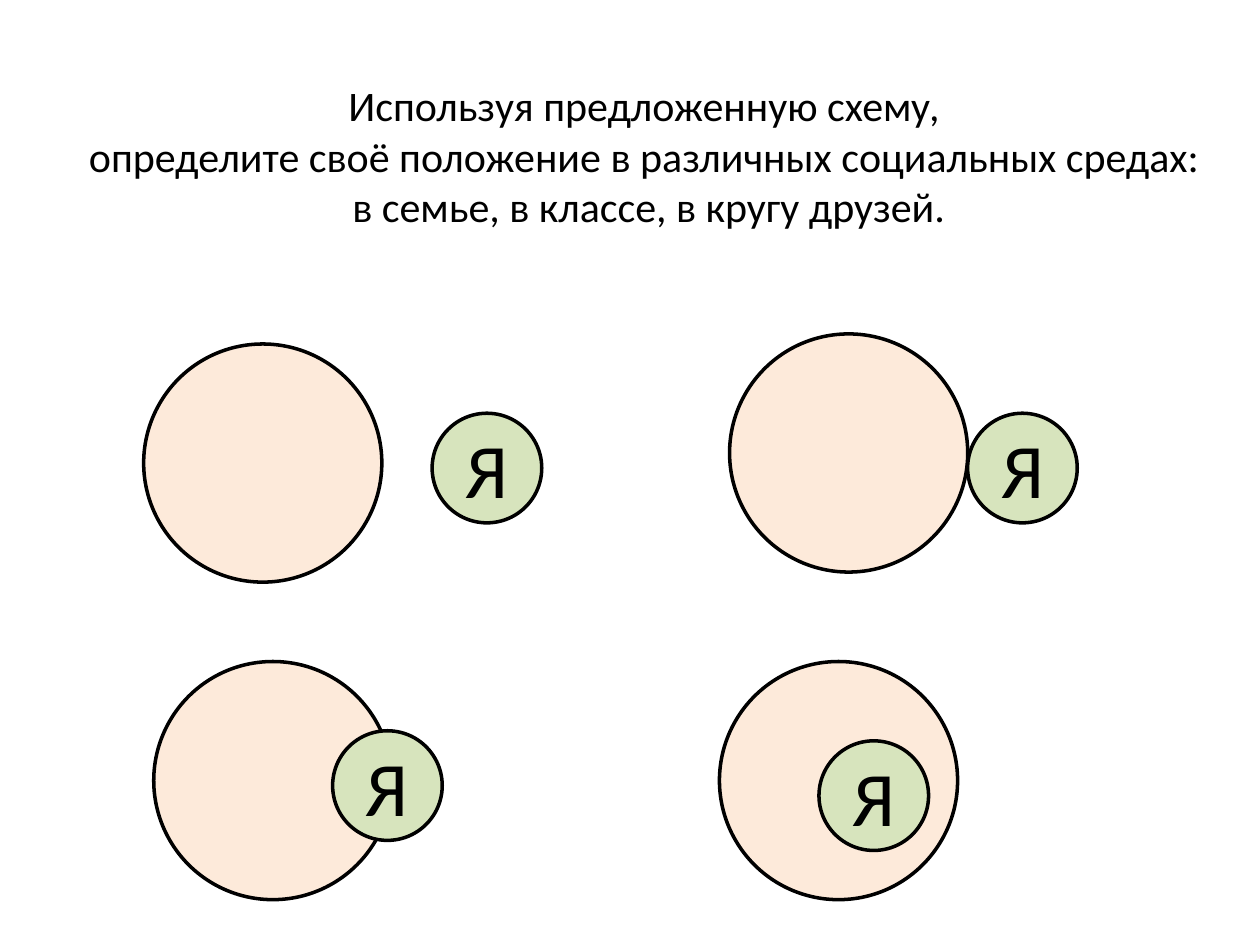
import pptx
import pptx.dml.color
import pptx.enum.shapes
import pptx.enum.text
import pptx.util

BLACK = pptx.dml.color.RGBColor(0x00, 0x00, 0x00)
PEACH = pptx.dml.color.RGBColor(0xFD, 0xEA, 0xDA)
GREEN = pptx.dml.color.RGBColor(0xD7, 0xE4, 0xBD)
Inches = pptx.util.Inches

GROUP_SIZE = 1.89
SELF_SIZE = 0.87
# (left, top) of the group circle and of the "Я" circle
POSITIONS = [
    ((1.14, 2.73), (3.43, 3.28)),  # apart
    ((5.79, 2.65), (7.68, 3.28)),  # touching
    ((1.22, 5.25), (2.64, 5.80)),  # overlapping
    ((5.71, 5.25), (6.50, 5.88)),  # inside
]


def write(s, text, size):
    """Put centred black text in the middle of a shape."""
    tf = s.text_frame
    tf.text = text
    tf.vertical_anchor = pptx.enum.text.MSO_ANCHOR.MIDDLE
    p = tf.paragraphs[0]
    p.alignment = pptx.enum.text.PP_ALIGN.CENTER
    p.font.name = "Calibri"
    p.font.size = pptx.util.Pt(size)
    p.font.color.rgb = BLACK


def add_circle(position, size, color):
    left, top = position
    s = slide.shapes.add_shape(
        pptx.enum.shapes.MSO_SHAPE.OVAL,
        Inches(left), Inches(top), Inches(size), Inches(size))
    s.shadow.inherit = False
    s.fill.solid()
    s.fill.fore_color.rgb = color
    s.line.color.rgb = BLACK
    s.line.width = pptx.util.Pt(2)
    return s


prs = pptx.Presentation()
prs.slide_width = Inches(10)
prs.slide_height = Inches(7.5)
slide = prs.slides.add_slide(prs.slide_layouts[6])

title = slide.shapes.add_textbox(Inches(0.5), Inches(0.3), Inches(9.3), Inches(1.87))
title.text_frame.word_wrap = True
write(title,
      "Используя предложенную схему, \v"
      "определите своё положение в различных социальных средах: \v"
      "в семье, в классе, в кругу друзей.", 24)

for group, self_circle in POSITIONS:
    add_circle(group, GROUP_SIZE, PEACH)
    write(add_circle(self_circle, SELF_SIZE, GREEN), "Я", 44)

prs.save("out.pptx")
